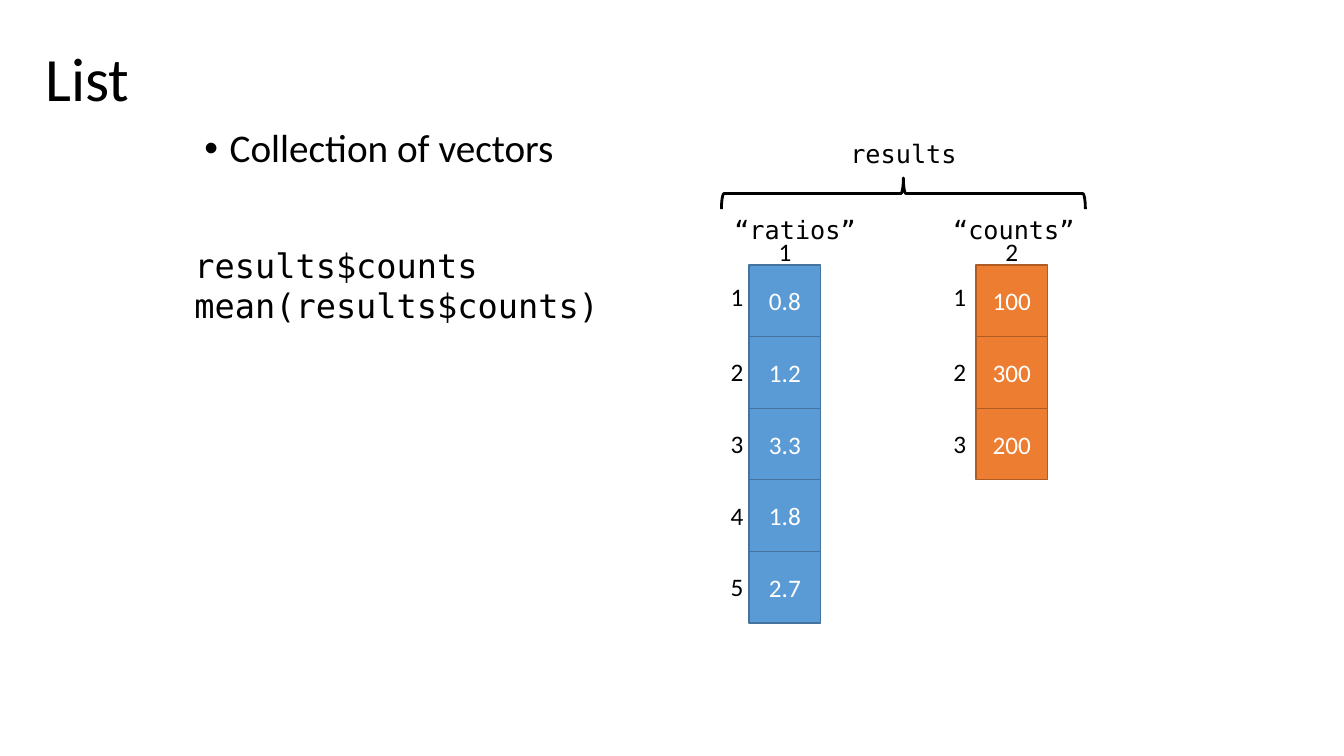
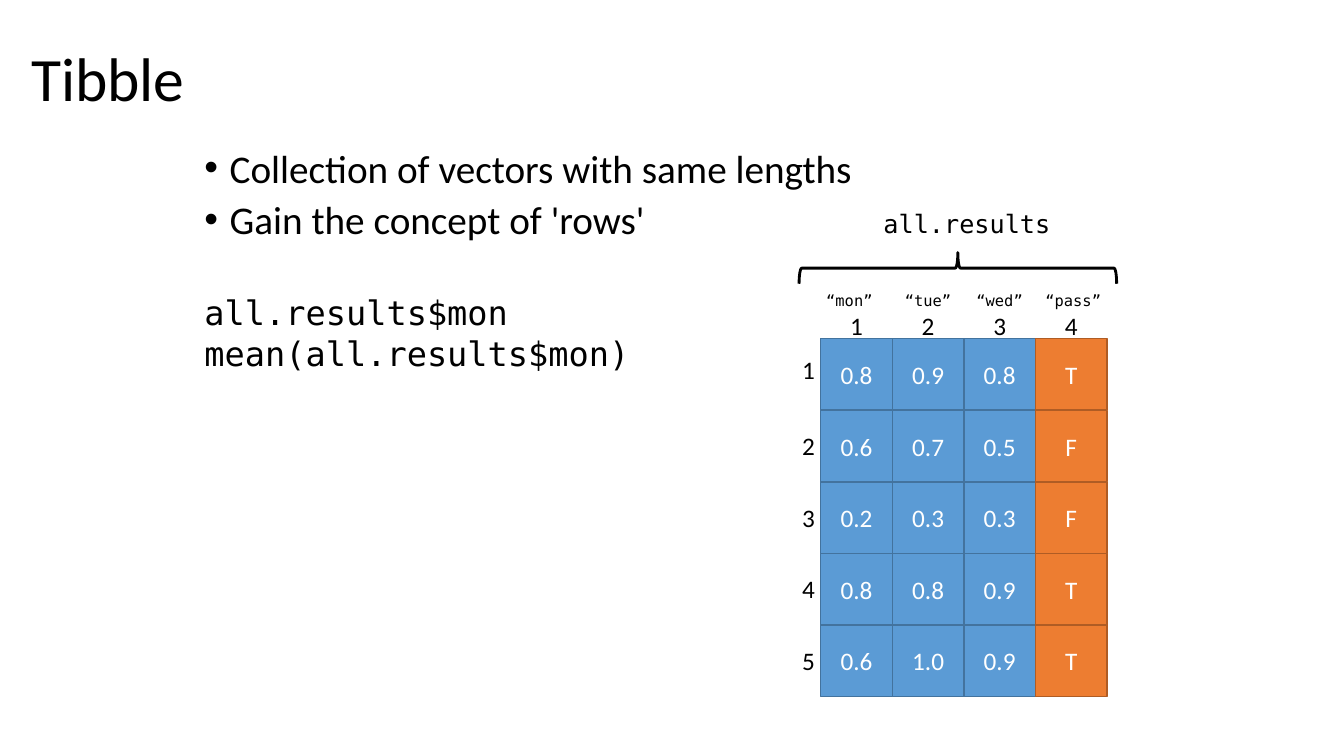
from pptx import Presentation
from pptx.dml.color import RGBColor
from pptx.enum.shapes import MSO_SHAPE
from pptx.enum.text import MSO_ANCHOR, MSO_AUTO_SIZE, PP_ALIGN
from pptx.oxml.ns import qn
from pptx.util import Inches, Pt

COLORS = {
    "text": "000000", "cell_text": "FFFFFF",
    "blue": "5B9BD5", "blue_line": "43739E",
    "orange": "ED7D31", "orange_line": "AF5C24",
}
SANS, MONO = "Calibri", "DejaVu Sans Mono"
CELL = 0.71            # side of a square cell
BRACE_DEPTH = 0.31

# Content: each column has its name, values, colour, left edge and name shift
SLIDES = [
    {
        "title": "List", "title_left": 0.35,
        "bullets": ["Collection of vectors"],
        "body_top": 1.23, "body_height": 0.74, "body_spacing": 0.9,
        "code": ["results$counts", "mean(results$counts)"],
        "code_box": (1.83, 2.38, 4.27, 0.91),
        "name": "results", "name_center": 8.96, "name_top": 1.32,
        "brace_center": (8.96, 1.92), "brace_span": 3.61,
        "grid_top": 2.63, "label_size": 18, "label_rise": 0.55,
        "columns": [
            ("“ratios”", ["0.8", "1.2", "3.3", "1.8", "2.7"], "blue", 7.43, 0.1),
            ("“counts”", ["100", "300", "200"], "orange", 9.68, 0.02),
        ],
        "row_numbers": {0: 0.12, 1: 0.16},     # column: gap to its left
    },
    {
        "title": "Tibble", "title_left": 0.21,
        "bullets": ["Collection of vectors with same lengths",
                    "Gain the concept of 'rows'"],
        "body_top": 1.47, "body_height": 1.02, "body_spacing": 0.8,
        "code": ["all.results$mon", "mean(all.results$mon)"],
        "code_box": (1.93, 2.85, 4.47, 0.91),
        "name": "all.results", "name_center": 9.59, "name_top": 2.02,
        "brace_center": (9.5, 2.66), "brace_span": 3.15,
        "grid_top": 3.36, "label_size": 11, "label_rise": 0.52,
        "columns": [
            (name, values, color, 8.14 + index * CELL, shift)
            for index, (name, values, color, shift) in enumerate([
                ("“mon”", ["0.8", "0.6", "0.2", "0.8", "0.6"], "blue", -0.07),
                ("“tue”", ["0.9", "0.7", "0.3", "0.8", "1.0"], "blue", 0),
                ("“wed”", ["0.8", "0.5", "0.3", "0.9", "0.9"], "blue", 0),
                ("“pass”", ["T", "F", "F", "T", "T"], "orange", 0.02),
            ])
        ],
        "row_numbers": {0: 0.12},
    },
]


def write(shape, lines, size=18, font=SANS, color="text", align=PP_ALIGN.LEFT,
          anchor=MSO_ANCHOR.TOP, wrap=True, spacing=None, before=None, bullet=None):
    frame = shape.text_frame
    frame.word_wrap = wrap
    frame.auto_size = MSO_AUTO_SIZE.NONE if wrap else MSO_AUTO_SIZE.SHAPE_TO_FIT_TEXT
    frame.vertical_anchor = anchor
    for index, line in enumerate(lines):
        paragraph = frame.add_paragraph() if index else frame.paragraphs[0]
        paragraph.alignment = align
        if spacing:
            paragraph.line_spacing = spacing
        if before:
            paragraph.space_before = Pt(before)
        if bullet:
            properties = paragraph._p.get_or_add_pPr()
            properties.set("marL", str(Inches(0.25)))
            properties.set("indent", str(-Inches(0.25)))
            properties.append(properties.makeelement(qn("a:buFont"), {"typeface": "Arial"}))
            properties.append(properties.makeelement(qn("a:buChar"), {"char": bullet}))
        run = paragraph.add_run()
        run.text = line
        run.font.size = Pt(size)
        run.font.name = font
        run.font.color.rgb = RGBColor.from_string(COLORS[color])


def add_text(slide, box, lines, **text_format):
    shape = slide.shapes.add_textbox(*map(Inches, box))
    write(shape, lines, **text_format)


def add_label(slide, center, top, text, size=18, font=SANS):
    # Room for the widest glyphs plus the insets, so the label stays on one line
    width = 0.3 + len(text) * size * 0.64 / 72
    height = 0.1 + size / 60
    add_text(slide, (center - width / 2, top, width, height), [text],
             size=size, font=font, align=PP_ALIGN.CENTER, wrap=False)


def add_shape(slide, kind, box, line, weight, fill=None):
    shape = slide.shapes.add_shape(kind, *map(Inches, box))
    shape.shadow.inherit = False
    if fill:
        shape.fill.solid()
        shape.fill.fore_color.rgb = RGBColor.from_string(COLORS[fill])
    else:
        shape.fill.background()
    shape.line.color.rgb = RGBColor.from_string(COLORS[line])
    shape.line.width = Pt(weight)
    return shape


def add_brace(slide, center, span):
    x, y = center
    brace = add_shape(slide, MSO_SHAPE.RIGHT_BRACE,
                      (x - BRACE_DEPTH / 2, y - span / 2, BRACE_DEPTH, span), "text", 2)
    brace.rotation = 270


def add_vectors(slide, content):
    top = content["grid_top"]
    for index, (name, values, color, left, shift) in enumerate(content["columns"]):
        center = left + CELL / 2
        # Column name and number
        add_label(slide, center + shift, top - content["label_rise"], name,
                  size=content["label_size"], font=MONO)
        add_label(slide, center, top - 0.33, str(index + 1))
        # Cells and row numbers
        for row, value in enumerate(values):
            cell_top = top + row * CELL
            cell = add_shape(slide, MSO_SHAPE.RECTANGLE, (left, cell_top, CELL, CELL),
                             color + "_line", 1, fill=color)
            write(cell, [value], color="cell_text", align=PP_ALIGN.CENTER,
                  anchor=MSO_ANCHOR.MIDDLE)
            if index in content["row_numbers"]:
                add_label(slide, left - content["row_numbers"][index],
                          cell_top + (0.15 if row else 0.11), str(row + 1))


def build_slide(presentation, content):
    slide = presentation.slides.add_slide(presentation.slide_layouts[6])
    # Title, bullets and code
    add_text(slide, (content["title_left"], 0.18, 9, 1.25), [content["title"]],
             size=44, anchor=MSO_ANCHOR.MIDDLE, spacing=0.9)
    add_text(slide, (1.93, content["body_top"], 9, content["body_height"]),
             content["bullets"], size=28, spacing=content["body_spacing"],
             before=10, bullet="•")
    add_text(slide, content["code_box"], content["code"], size=24, font=MONO, wrap=False)
    # Diagram
    add_label(slide, content["name_center"], content["name_top"], content["name"], font=MONO)
    add_brace(slide, content["brace_center"], content["brace_span"])
    add_vectors(slide, content)


def main():
    presentation = Presentation()
    presentation.slide_width = Inches(13.33)
    presentation.slide_height = Inches(7.5)
    for content in SLIDES:
        build_slide(presentation, content)
    presentation.save("out.pptx")


if __name__ == "__main__":
    main()
